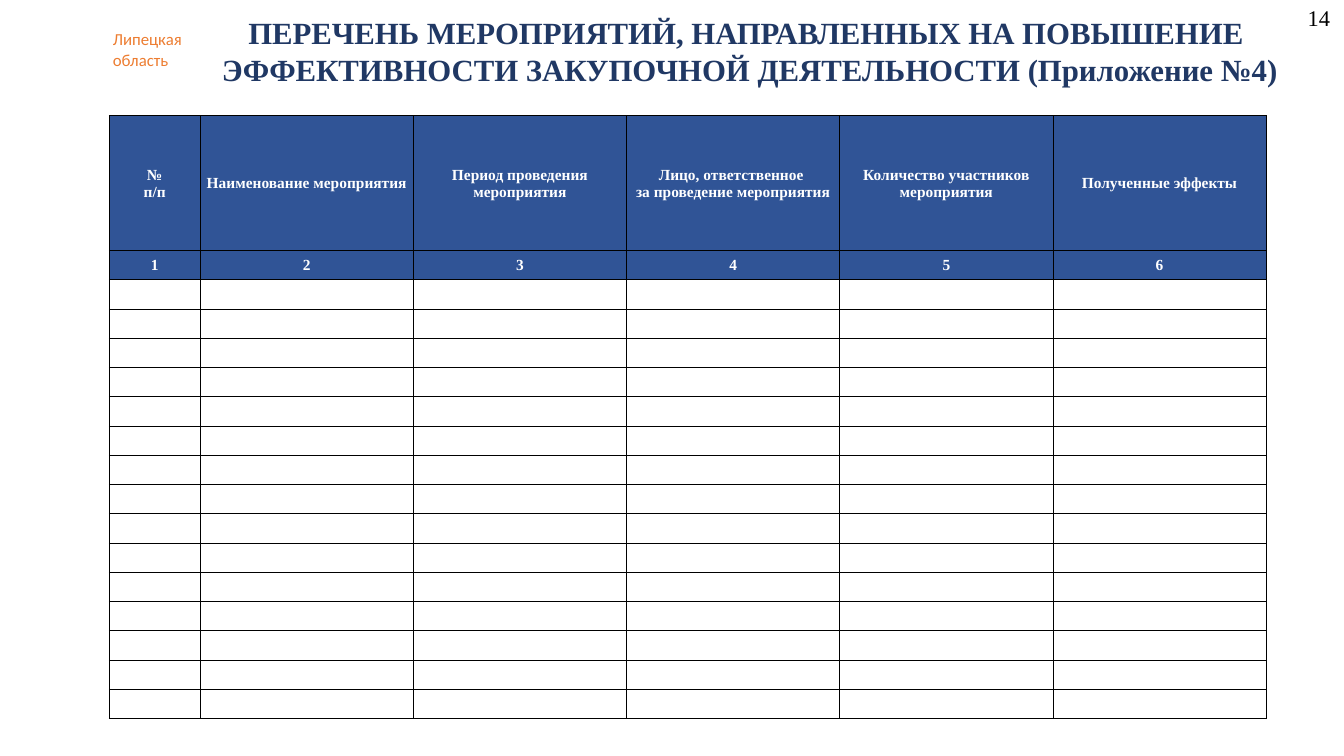
"""Build the slide with the blank list of procurement improvement events."""
from lxml import etree
from pptx import Presentation
from pptx.dml.color import RGBColor
from pptx.enum import text
from pptx.oxml import ns
from pptx.util import Pt

REGION = "Липецкая\nобласть"
TITLE = ("ПЕРЕЧЕНЬ МЕРОПРИЯТИЙ, НАПРАВЛЕННЫХ НА ПОВЫШЕНИЕ \n"
         "ЭФФЕКТИВНОСТИ ЗАКУПОЧНОЙ ДЕЯТЕЛЬНОСТИ (Приложение №4)")
PAGE = "14"
HEADERS = ["№\vп/п", "Наименование мероприятия", "Период проведения мероприятия",
           "Лицо, ответственное \vза проведение мероприятия",
           "Количество участников мероприятия", "Полученные эффекты"]
EMPTY_ROWS = 15

ORANGE = RGBColor(0xED, 0x7D, 0x31)
NAVY = RGBColor(0x20, 0x38, 0x64)
BLUE = RGBColor(0x30, 0x54, 0x96)
BLACK = RGBColor(0, 0, 0)
WHITE = RGBColor(255, 255, 255)
SERIF = "Times New Roman"

TABLE_LEFT, TABLE_TOP = 78, 82.5
NUMBER_WIDTH, COLUMN_WIDTH = 65, 152.3
HEADER_HEIGHT, ROW_HEIGHT = 96.4, 20.9


def write(tf, content, size, color, font=SERIF, bold=False, align=None):
    """Fill a text frame and format all its runs."""
    tf.text = content
    for p in tf.paragraphs:
        p.alignment = align
        for r in p.runs:
            r.font.size, r.font.name, r.font.bold = Pt(size), font, bold
            r.font.color.rgb = color


def add_label(s, box, *style):
    """Add a text box with formatted text."""
    tf = s.shapes.add_textbox(*map(Pt, box)).text_frame
    tf.word_wrap = True
    write(tf, *style)


def set_borders(cell):
    """Draw thin black lines on all sides of a cell."""
    tcPr = cell._tc.get_or_add_tcPr()
    for i, side in enumerate(("lnL", "lnR", "lnT", "lnB")):
        ln = etree.Element(ns.qn("a:" + side), w=str(Pt(0.5)))
        fill = etree.SubElement(ln, ns.qn("a:solidFill"))
        etree.SubElement(fill, ns.qn("a:srgbClr"), val=str(BLACK))
        tcPr.insert(i, ln)


def add_events_table(s):
    """Add the table with its two heading rows and empty rows."""
    heads = [HEADERS, [str(n + 1) for n in range(len(HEADERS))]]
    widths = [NUMBER_WIDTH] + [COLUMN_WIDTH] * (len(HEADERS) - 1)
    heights = [HEADER_HEIGHT] + [ROW_HEIGHT] * (EMPTY_ROWS + 1)
    box = (TABLE_LEFT, TABLE_TOP, sum(widths), sum(heights))
    table = s.shapes.add_table(len(heights), len(widths), *map(Pt, box)).table
    for column, width in zip(table.columns, widths):
        column.width = Pt(width)
    for i, height in enumerate(heights):
        row = table.rows[i]
        row.height = Pt(height)
        for j, cell in enumerate(row.cells):
            cell.margin_left = cell.margin_right = cell.margin_top = Pt(0.7)
            cell.margin_bottom = 0
            cell.vertical_anchor = text.MSO_ANCHOR.MIDDLE
            if i < len(heads):
                cell.fill.solid()
                cell.fill.fore_color.rgb = BLUE
                write(cell.text_frame, heads[i][j], 11, WHITE, SERIF, True,
                      text.PP_ALIGN.CENTER)
            else:
                cell.fill.background()
                p = cell.text_frame.paragraphs[0]._p
                etree.SubElement(p, ns.qn("a:endParaRPr"), sz="1100")
            set_borders(cell)


def main():
    """Assemble and save the slide."""
    prs = Presentation()
    prs.slide_width, prs.slide_height = Pt(960), Pt(540)
    s = prs.slides.add_slide(prs.slide_layouts[5])
    add_label(s, (73.5, 17.3, 66, 36), REGION, 12, ORANGE, "Calibri")
    title = s.shapes.title
    title.left, title.top, title.width, title.height = map(Pt, (111, 6, 849, 60.5))
    write(title.text_frame, TITLE, 22, NAVY, SERIF, True, text.PP_ALIGN.CENTER)
    add_label(s, (927, -0.5, 33, 26.6), PAGE, 16, BLACK)
    add_events_table(s)
    prs.save("out.pptx")


if __name__ == "__main__":
    main()
